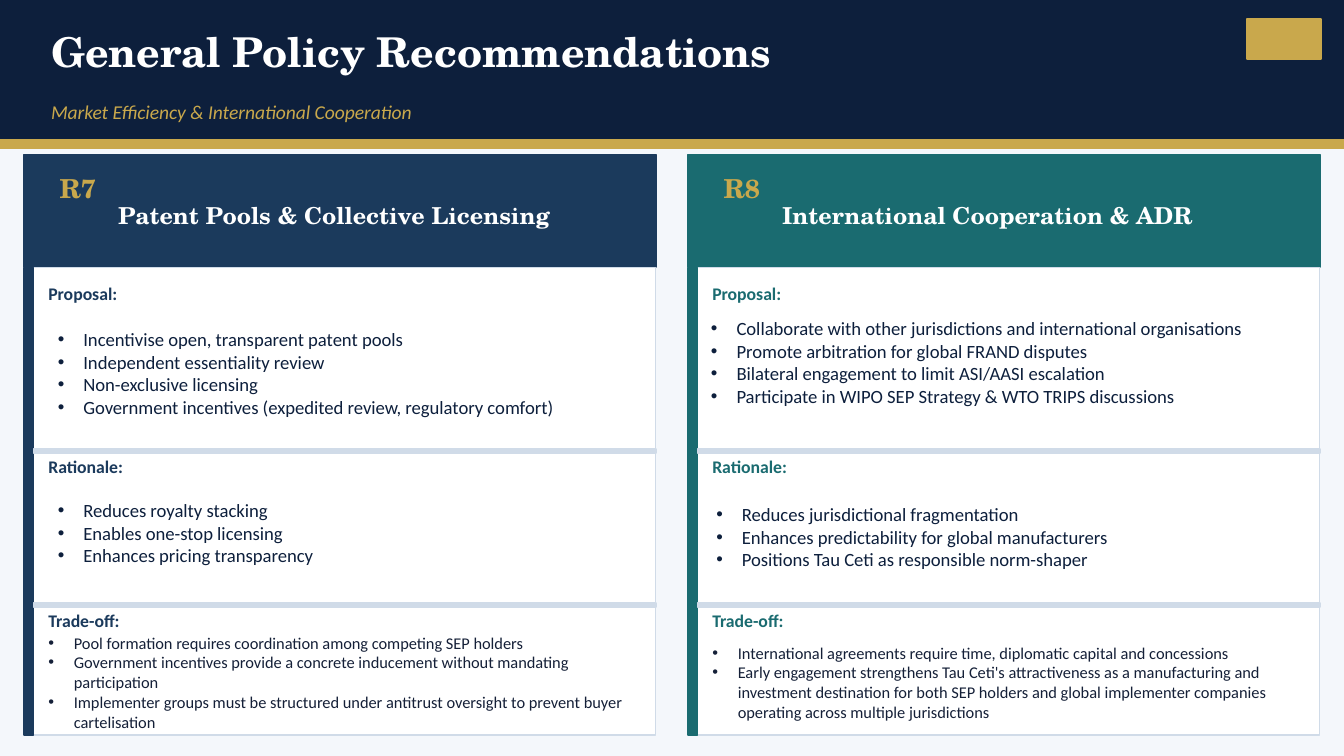
from pptx import Presentation
from pptx.dml.color import RGBColor
from pptx.enum.shapes import MSO_SHAPE
from pptx.enum.text import MSO_ANCHOR, MSO_AUTO_SIZE, PP_ALIGN
from pptx.oxml.ns import qn
from pptx.util import Pt
from lxml import etree

RECT = MSO_SHAPE.RECTANGLE
MIDDLE = MSO_ANCHOR.MIDDLE
NO_FIT, GROW = MSO_AUTO_SIZE.NONE, MSO_AUTO_SIZE.SHAPE_TO_FIT_TEXT
LEFT, CENTER = PP_ALIGN.LEFT, PP_ALIGN.CENTER
PX = 9144  # 100 px to the inch

THEME = {
    "page": "F4F7FB", "navy": "0D1F3C", "gold": "C9A84C", "white": "FFFFFF",
    "rule": "D0DBE8", "blue": "1B3A5C", "teal": "1A6B70", "ink": "152038",
    "serif": "TeX Gyre Schola", "sans": "Calibri", "bullet": "Arial",
    "title": 22, "subtitle": 10.5, "number": 14, "heading": 12.5,
    "label": 9.5, "list": 10, "small": 8.8,
}

prs = Presentation()
prs.slide_width = 1000 * PX
prs.slide_height = prs.slide_width * 9 // 16
s = prs.slides.add_slide(prs.slide_layouts.get_by_name("Comparison"))
s.background.fill.solid()
s.background.fill.fore_color.rgb = RGBColor.from_string(THEME["page"])
holders = {sp.placeholder_format.idx: sp for sp in s.placeholders}


def bar(x, y, w, h, fill, line=None, weight=1):
    sp = s.shapes.add_shape(RECT, x * PX, y * PX, w * PX, h * PX)
    sp.shadow.inherit = False
    sp.fill.solid()
    sp.fill.fore_color.rgb = RGBColor.from_string(THEME[fill])
    sp.line.color.rgb = RGBColor.from_string(THEME[line or fill])
    sp.line.width = Pt(weight)


def write(box, lines, size, color, font="sans", bold=False, italic=False,
          align=LEFT, bullets=False, fitted=False, holder=None):
    sp = holder or s.shapes.add_textbox(0, 0, 0, 0)
    sp.element.getparent().append(sp.element)  # bring to front
    sp.left, sp.top, sp.width, sp.height = [v * PX for v in box]
    tf = sp.text_frame
    tf.vertical_anchor = MIDDLE
    tf.word_wrap = not fitted
    tf.auto_size = GROW if fitted else NO_FIT
    tf.margin_left = tf.margin_right = 10 * PX if fitted else 0
    tf.margin_top = tf.margin_bottom = 5 * PX if fitted else 0
    for i, line in enumerate(lines):
        p = tf.add_paragraph() if i else tf.paragraphs[0]
        p.alignment = align
        p.space_before = Pt(0)
        if bullets:
            pPr = p._p.get_or_add_pPr()
            pPr.set("marL", str(19 * PX))
            pPr.set("indent", str(-19 * PX))
            etree.SubElement(pPr, qn("a:buFont")).set("typeface", THEME["bullet"])
            etree.SubElement(pPr, qn("a:buChar")).set("char", "•")
        r = p.add_run()
        r.text = line
        r.font.name, r.font.size = THEME[font], Pt(THEME[size])
        r.font.bold, r.font.italic = bold, italic
        r.font.color.rgb = RGBColor.from_string(THEME[color])


# Header band
bar(0, 0, 1000, 104, "navy")
bar(0, 104, 1000, 6, "gold")
bar(928, 14, 55, 30, "gold")
write((38, 9, 875, 58), ["General Policy Recommendations"], "title", "white",
      "serif", bold=True, holder=holders[0])
write((38, 69, 875, 28), ["Market Efficiency & International Cooperation"],
      "subtitle", "gold", italic=True)

# Recommendations: number, heading, colour, (box, lines) for the fitted lists, trade-offs
CARDS = [
    ("R7", "Patent Pools & Collective Licensing", "blue", [
        ((33, 239, 397, 77), [
            "Incentivise open, transparent patent pools",
            "Independent essentiality review",
            "Non-exclusive licensing",
            "Government incentives (expedited review, regulatory comfort)"]),
        ((33, 366, 213, 61), [
            "Reduces royalty stacking",
            "Enables one-stop licensing",
            "Enhances pricing transparency"])],
     ["Pool formation requires coordination among competing SEP holders",
      "Government incentives provide a concrete inducement without mandating participation",
      "Implementer groups must be structured under antitrust oversight to prevent buyer "
      "cartelisation"]),
    ("R8", "International Cooperation & ADR", "teal", [
        ((519, 231, 422, 77), [
            "Collaborate with other jurisdictions and international organisations",
            "Promote arbitration for global FRAND disputes",
            "Bilateral engagement to limit ASI/AASI escalation",
            "Participate in WIPO SEP Strategy & WTO TRIPS discussions"]),
        ((523, 369, 315, 61), [
            "Reduces jurisdictional fragmentation",
            "Enhances predictability for global manufacturers",
            "Positions Tau Ceti as responsible norm-shaper"])],
     ["International agreements require time, diplomatic capital and concessions",
      "Early engagement strengthens Tau Ceti's attractiveness as a manufacturing and "
      "investment destination for both SEP holders and global implementer companies "
      "operating across multiple jurisdictions"]),
]
LABELS = [("Proposal:", 208), ("Rationale:", 337), ("Trade-off:", 452)]

for col, (number, heading, color, lists, tradeoffs) in enumerate(CARDS):
    x = 18 + 494 * col

    # Card header
    bar(x, 115, 470, 84, color)
    write((x + 15, 125, 50, 30), [number], "number", "gold", "serif", bold=True, align=CENTER)
    write((x + 70, 124, 390, 72), [heading], "heading", "white", "serif", bold=True)

    # Card body with side stripe and dividers
    bar(x, 199, 470, 348, "white", "rule", 0.75)
    bar(x, 199, 7, 348, color)
    for y in (334, 449):
        bar(x + 7, y, 463, 3, "rule")

    # Section labels and lists
    for label, y in LABELS:
        write((x + 18, y, 446, 20), [label], "label", color, bold=True)
    for row, (box, lines) in enumerate(lists):
        write(box, lines, "list", "navy", bullets=True, fitted=True,
              holder=holders[1 + 2 * col + row])
    write((x + 18, 473, 444, 69), tradeoffs, "small", "ink", bullets=True)

prs.save("out.pptx")
